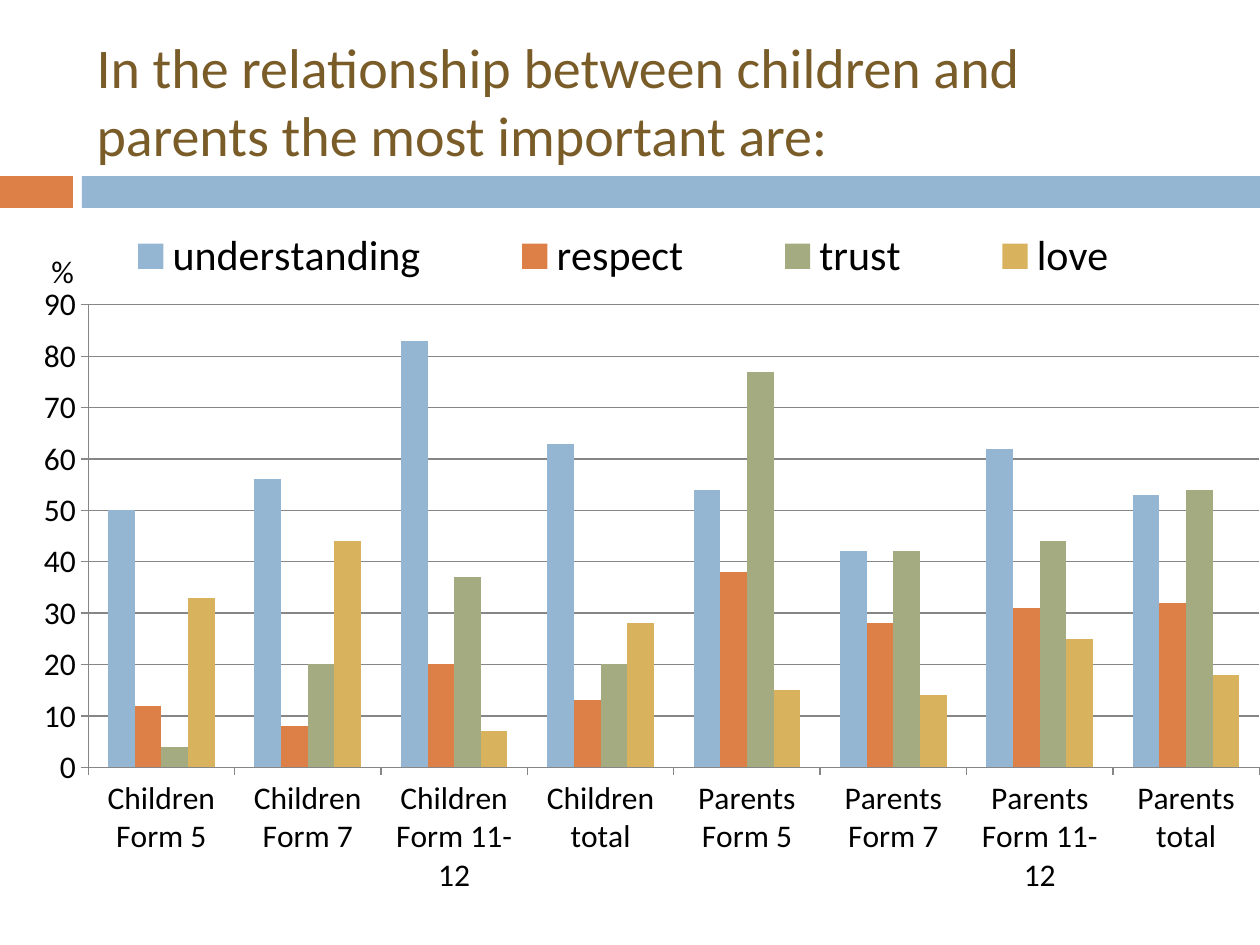
from lxml import etree
from pptx import Presentation
from pptx.chart.data import CategoryChartData
from pptx.dml.color import RGBColor
from pptx.enum.chart import XL_CHART_TYPE as ChartType, XL_LEGEND_POSITION as LegendPos
from pptx.enum.chart import XL_TICK_MARK as TickMark
from pptx.enum.shapes import MSO_SHAPE
from pptx.enum.text import MSO_ANCHOR, PP_ALIGN
from pptx.oxml import parse_xml
from pptx.oxml.ns import nsdecls
from pptx.util import Pt

PX = 914400 // 126
FONT = "Calibri"
BLUE = RGBColor(0x94, 0xB6, 0xD2)
ORANGE = RGBColor(0xDD, 0x80, 0x47)
GREEN = RGBColor(0xA5, 0xAB, 0x81)
GOLD = RGBColor(0xD8, 0xB2, 0x5C)
BROWN = RGBColor(0x79, 0x5C, 0x28)
BLACK = RGBColor(0, 0, 0)
GREY = RGBColor(0x86, 0x86, 0x86)

# Content
TITLE = "In the relationship between children and parents the most important are:"
CATEGORIES = [
    "Children Form 5", "Children Form 7", "Children Form 11-12", "Children total",
    "Parents Form 5", "Parents Form 7", "Parents Form 11-12", "Parents total",
]
SERIES = [
    ("understanding", BLUE, (50, 56, 83, 63, 54, 42, 62, 53)),
    ("respect", ORANGE, (12, 8, 20, 13, 38, 28, 31, 32)),
    ("trust", GREEN, (4, 20, 37, 20, 77, 42, 44, 54)),
    ("love", GOLD, (33, 44, 7, 28, 15, 14, 25, 18)),
]
BANDS = [(0, 73, ORANGE), (82, 1178, BLUE)]  # left, width, colour
PLOT_LAYOUT = (0.07, 0.117, 0.93, 0.638)
LEGEND_LAYOUT = (0.04, 0.01, 0.91, 0.08)


def box(*lengths):
    return [n * PX for n in lengths]


def style_font(font, size, color=BLACK):
    font.name, font.size, font.bold = FONT, Pt(size), False
    font.color.rgb = color


def write(sp, text, size, color=BLACK, align=PP_ALIGN.LEFT, anchor=MSO_ANCHOR.TOP):
    tf = sp.text_frame
    tf.word_wrap = True
    tf.vertical_anchor = anchor
    p = tf.paragraphs[0]
    p.alignment = align
    r = p.add_run()
    r.text = text
    style_font(r.font, size, color)


def layout_xml(x, y, w, h, inner=False):
    target = '<c:layoutTarget val="inner"/>' if inner else ""
    return parse_xml(
        f'<c:layout {nsdecls("c")}><c:manualLayout>{target}'
        '<c:xMode val="edge"/><c:yMode val="edge"/>'
        f'<c:x val="{x}"/><c:y val="{y}"/><c:w val="{w}"/><c:h val="{h}"/>'
        "</c:manualLayout></c:layout>")


def set_layout(parent, layout, before):
    """Place a manual layout ahead of the named child element."""
    for old in parent.findall("{*}layout"):
        parent.remove(old)
    parent.find("{*}" + before).addprevious(layout)


def add_bar_chart(slide):
    data = CategoryChartData()
    data.categories = CATEGORIES
    for name, _, values in SERIES:
        data.add_series(name, values)
    chart = slide.shapes.add_chart(
        ChartType.COLUMN_CLUSTERED, *box(0, 220, 1260, 725), data).chart
    chart.has_title = False
    style_font(chart.font, 18)

    plot = chart.plots[0]
    plot.gap_width, plot.overlap = 150, 0
    plot.vary_by_categories = False
    for s, (_, color, _) in zip(plot.series, SERIES):
        s.format.fill.solid()
        s.format.fill.fore_color.rgb = color

    # Axes
    value_axis = chart.value_axis
    value_axis.minimum_scale, value_axis.maximum_scale = 0, 90
    value_axis.major_unit = 10
    value_axis.has_major_gridlines = True
    value_axis.major_gridlines.format.line.color.rgb = GREY
    for axis in (chart.category_axis, value_axis):
        axis.major_tick_mark = TickMark.OUTSIDE
        axis.format.line.color.rgb = GREY
        style_font(axis.tick_labels.font, 18)

    # Legend and plot positions
    chart.has_legend = True
    legend = chart.legend
    legend.position = LegendPos.RIGHT
    legend.include_in_layout = False
    style_font(legend.font, 24)
    set_layout(legend._element, layout_xml(*LEGEND_LAYOUT), "overlay")
    set_layout(chart._chartSpace.chart.plotArea,
               layout_xml(*PLOT_LAYOUT, inner=True), "barChart")


def main():
    prs = Presentation()
    prs.slide_width, prs.slide_height = box(1260, 945)
    slide = prs.slides.add_slide(prs.slide_layouts[5])

    # Divider bands
    for left, width, color in BANDS:
        sp = slide.shapes.add_shape(MSO_SHAPE.RECTANGLE, *box(left, 176, width, 32))
        sp.shadow.inherit = False
        sp.fill.solid()
        sp.fill.fore_color.rgb = color
        sp.line.fill.background()

    # Title
    title = slide.shapes.title
    title.left, title.top, title.width, title.height = box(84, 32, 1124, 136)
    write(title, TITLE, 32, color=BROWN, anchor=MSO_ANCHOR.MIDDLE)

    # Chart and its unit label
    add_bar_chart(slide)
    write(slide.shapes.add_textbox(*box(39, 246, 49, 50)), "%", 18)

    prs.save("out.pptx")


if __name__ == "__main__":
    main()
